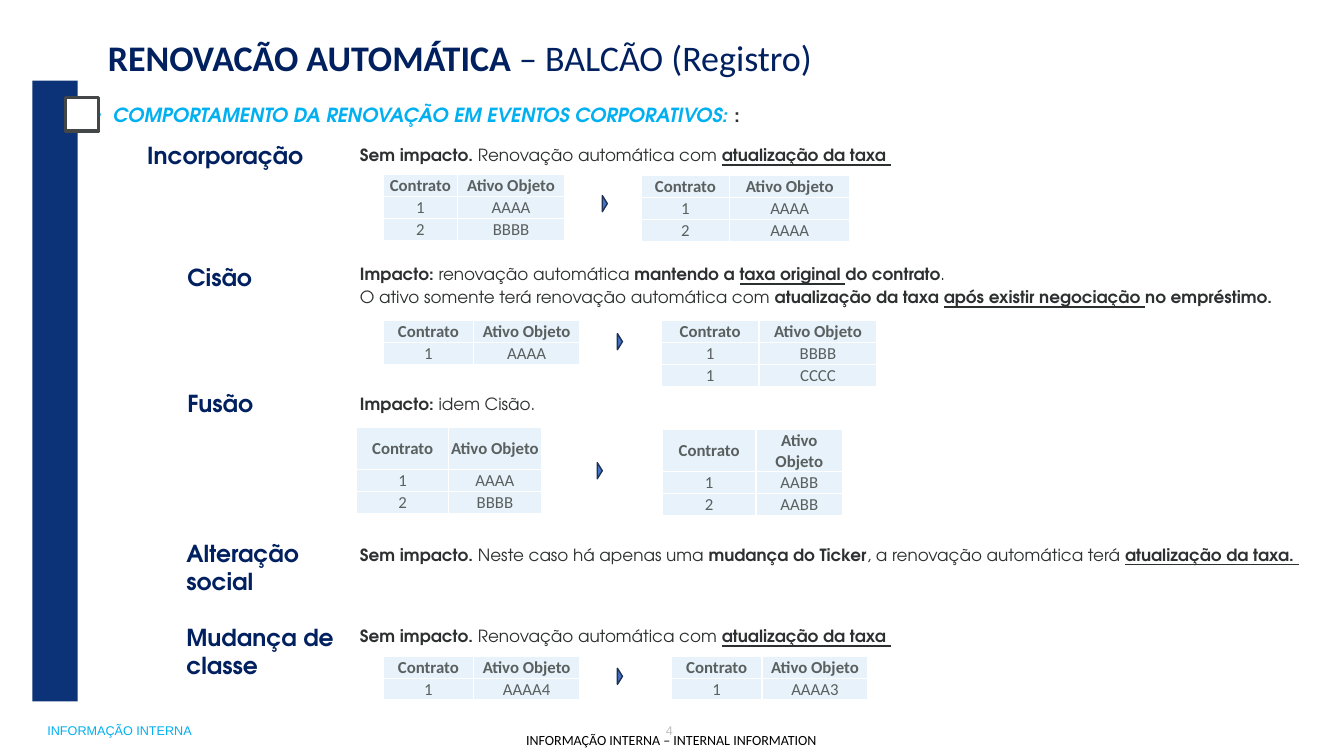
"""Build the slide on automatic renewal under corporate events."""
import dataclasses
import typing

import lxml.etree
import pptx
import pptx.dml.color
import pptx.enum.shapes
import pptx.enum.text
import pptx.oxml.ns
import pptx.util

COLORS = {
    "navy": "002060", "sidebar": "0C3377", "cyan": "00B0F0", "ink": "2D3030",
    "cell": "E7F2FA", "cell_text": "5A5F5F", "white": "FFFFFF", "frame": "444747",
    "arrow": "4472C4", "arrow_line": "1E3256", "number": "BFBFBF", "black": "000000",
}
COLUMNS, ROWS = 133.33, 75
DISPLAY_FONT = "TeX Gyre Adventor"
ALIGN = pptx.enum.text.PP_ALIGN
ANCHOR = pptx.enum.text.MSO_ANCHOR
SHAPES = pptx.enum.shapes.MSO_SHAPE
TEXT_LEFT, TEXT_WIDTH = 35.2, 96.5
ROW_HEIGHT = 2.18

deck = pptx.Presentation()
deck.slide_width = pptx.util.Inches(13.33)
deck.slide_height = pptx.util.Inches(7.5)


class Area(typing.NamedTuple):
    left: float
    top: float
    width: float
    height: float


class Span(typing.NamedTuple):
    text: str
    bold: bool = False
    underline: bool = False
    italic: bool = False
    color: str = ""


@dataclasses.dataclass
class Grid:
    left: float
    top: float
    widths: tuple[float, float]
    assets: list[tuple[str, str]]
    header: float = ROW_HEIGHT


@dataclasses.dataclass
class Event:
    name: str
    label: Area
    text_top: float
    lines: list[list[Span]]
    grids: list[Grid] = dataclasses.field(default_factory=list)
    arrow: tuple[float, float] | None = None


@dataclasses.dataclass
class Style:
    size: float
    color: str
    font: str = DISPLAY_FONT
    align: typing.Any = ALIGN.LEFT
    anchor: typing.Any = ANCHOR.TOP
    inset: tuple[float, float] = (1, 0.5)
    spacing: float = 1.0


def column(count: float) -> int:
    return round(deck.slide_width * count / COLUMNS)


def row(count: float) -> int:
    return round(deck.slide_height * count / ROWS)


def rgb(name: str) -> pptx.dml.color.RGBColor:
    return pptx.dml.color.RGBColor.from_string(COLORS[name])


def apply(target: typing.Any, values: dict[str, typing.Any]) -> None:
    for name, value in values.items():
        setattr(target, name, value)


def frame(area: Area) -> tuple[int, int, int, int]:
    return column(area.left), row(area.top), column(area.width), row(area.height)


def write(box: typing.Any, lines: list[list[Span]], style: Style) -> None:
    across, down = column(style.inset[0]), row(style.inset[1])
    text = box.text_frame
    apply(text, {
        "word_wrap": True, "auto_size": pptx.enum.text.MSO_AUTO_SIZE.NONE,
        "vertical_anchor": style.anchor, "margin_left": across, "margin_right": across,
        "margin_top": down, "margin_bottom": down,
    })
    for index, line in enumerate(lines):
        para = text.add_paragraph() if index else text.paragraphs[0]
        apply(para, {
            "alignment": style.align, "line_spacing": style.spacing,
            "space_before": pptx.util.Pt(2.1 if index else 0),
        })
        for span in line:
            run = para.add_run()
            run.text = span.text
            apply(run.font, {
                "size": pptx.util.Pt(style.size), "name": style.font, "bold": span.bold,
                "italic": span.italic, "underline": span.underline,
            })
            run.font.color.rgb = rgb(span.color or style.color)


def add_text(page: typing.Any, area: Area, lines: list[list[Span]], style: Style) -> None:
    write(page.shapes.add_textbox(*frame(area)), lines, style)


def fill_placeholder(box: typing.Any, area: Area, line: list[Span], style: Style) -> None:
    apply(box, dict(zip(("left", "top", "width", "height"), frame(area))))
    write(box, [line], style)


def add_block(page: typing.Any, kind: typing.Any, area: Area, fill: str,
              line: str = "", weight: float = 1, rotation: float = 0) -> None:
    block = page.shapes.add_shape(kind, *frame(area))
    block.shadow.inherit = False
    block.rotation = rotation
    block.fill.solid()
    block.fill.fore_color.rgb = rgb(fill)
    if line:
        block.line.color.rgb = rgb(line)
        block.line.width = pptx.util.Pt(weight)
    else:
        block.line.fill.background()


def add_borders(cell: typing.Any) -> None:
    qn = pptx.oxml.ns.qn
    properties = cell._tc.get_or_add_tcPr()
    for index, side in enumerate(("a:lnL", "a:lnR", "a:lnT", "a:lnB")):
        border = lxml.etree.Element(qn(side), w=str(pptx.util.Pt(1)))
        solid = lxml.etree.SubElement(border, qn("a:solidFill"))
        lxml.etree.SubElement(solid, qn("a:srgbClr"), val=COLORS["white"])
        properties.insert(index, border)


def add_grid(page: typing.Any, grid: Grid) -> None:
    records = [("Contrato", "Ativo Objeto"), *grid.assets]
    heights = [grid.header] + [ROW_HEIGHT] * len(grid.assets)
    area = Area(grid.left, grid.top, sum(grid.widths), sum(heights))
    table = page.shapes.add_table(len(records), 2, *frame(area)).table
    apply(table, {"first_row": False, "horz_banding": False})
    for index, width in enumerate(grid.widths):
        table.columns[index].width = column(width)
    style = Style(12, "cell_text", "Calibri", ALIGN.CENTER)
    for y, record in enumerate(records):
        table.rows[y].height = row(heights[y])
        for x, value in enumerate(record):
            cell = table.cell(y, x)
            apply(cell, {
                "vertical_anchor": ANCHOR.MIDDLE, "margin_left": column(0.1),
                "margin_right": column(0.1), "margin_top": row(0.1), "margin_bottom": 0,
            })
            para = cell.text_frame.paragraphs[0]
            para.alignment = style.align
            run = para.add_run()
            run.text = value
            apply(run.font, {"size": pptx.util.Pt(style.size), "name": style.font, "bold": y == 0})
            run.font.color.rgb = rgb(style.color)
            cell.fill.solid()
            cell.fill.fore_color.rgb = rgb("cell")
            add_borders(cell)


def add_event(page: typing.Any, event: Event) -> None:
    add_text(page, event.label, [[Span(event.name, True)]], Style(16.7, "navy"))
    area = Area(TEXT_LEFT, event.text_top, TEXT_WIDTH, 2.4 * len(event.lines))
    add_text(page, area, event.lines, Style(12, "ink", inset=(0.5, 0.2)))
    for grid in event.grids:
        add_grid(page, grid)
    if event.arrow:
        x, y = event.arrow
        add_block(page, SHAPES.ISOSCELES_TRIANGLE, Area(x - 0.8, y - 0.25, 1.6, 0.5),
                  "arrow", "arrow_line", rotation=90)


RATE_UPDATE = [Span("Sem impacto. ", True), Span("Renovação automática com "),
               Span("atualização da taxa ", True, True)]
EVENTS = [
    Event("Incorporação", Area(13.6, 13.5, 19.1, 3.8), 14.2, [RATE_UPDATE],
          [Grid(38, 17.3, (7.4, 10.6), [("1", "AAAA"), ("2", "BBBB")]),
           Grid(63.6, 17.4, (8.8, 11.9), [("1", "AAAA"), ("2", "AAAA")])], (60, 20.2)),
    Event("Cisão", Area(17.6, 25.6, 11.1, 3.8), 26,
          [[Span("Impacto: ", True), Span("renovação automática "), Span("mantendo a ", True),
            Span("taxa original ", True, True), Span("do contrato", True), Span(".")],
           [Span("O ativo somente terá renovação automática com "),
            Span("atualização da taxa ", True), Span("após existir negociação ", True, True),
            Span("no empréstimo.", True)]],
          [Grid(38, 31.8, (9, 10.5), [("1", "AAAA")]),
           Grid(65.6, 31.8, (9.7, 11.7), [("1", "BBBB"), ("1", "CCCC")])], (61.5, 33.9)),
    Event("Fusão", Area(17.6, 38.1, 11.1, 3.8), 38.9,
          [[Span("Impacto: ", True), Span("idem Cisão.")]],
          [Grid(35.4, 42.4, (9.1, 9.2), [("1", "AAAA"), ("2", "BBBB")], 4.2),
           Grid(65.7, 42.6, (9.3, 8.6), [("1", "AABB"), ("2", "AABB")], 4.2)], (59.5, 46.7)),
    Event("Alteração social", Area(17.5, 53, 18.3, 6.6), 53.8,
          [[Span("Sem impacto. ", True), Span("Neste caso há apenas uma "),
            Span("mudança do Ticker", True), Span(", a renovação automática terá "),
            Span("atualização da taxa. ", True, True)]]),
    Event("Mudança de classe", Area(17.5, 61.3, 18.3, 6.6), 61.9, [RATE_UPDATE],
          [Grid(38, 65.1, (9, 10.5), [("1", "AAAA4")]),
           Grid(66.6, 65.1, (9, 10.5), [("1", "AAAA3")])], (61.5, 67.1)),
]


def main() -> None:
    page = deck.slides.add_slide(deck.slide_layouts[1])
    fill_placeholder(page.shapes.title, Area(9.7, 3.4, 86.6, 5.1),
                     [Span("RENOVACÃO AUTOMÁTICA ", True), Span("– BALCÃO (Registro)")],
                     Style(25.7, "navy", "Calibri", anchor=ANCHOR.MIDDLE, spacing=0.9))
    body = page.placeholders[1]
    fill_placeholder(body, Area(8.9, 10, 85.6, 5.6),
                     [Span("COMPORTAMENTO DA RENOVAÇÃO EM EVENTOS CORPORATIVOS: ", True, italic=True),
                      Span(":", True, color="ink")],
                     Style(13.9, "cyan", align=ALIGN.JUSTIFY, inset=(0.5, 0.2)))
    bullet = body.text_frame.paragraphs[0]._p.get_or_add_pPr()
    bullet.set("marL", str(column(1.8)))
    bullet.set("indent", str(-column(1.8)))
    add_block(page, SHAPES.RECTANGLE, Area(3.2, 8, 4.5, 61.6), "sidebar")
    add_block(page, SHAPES.RECTANGLE, Area(6.5, 9.7, 3.3, 3.3), "white", "frame", 2.25)
    for event in EVENTS:
        add_event(page, event)
    add_text(page, Area(3.7, 71.2, 37.8, 2.5), [[Span("INFORMAÇÃO INTERNA")]], Style(9, "cyan", "Arial"))
    add_text(page, Area(47.5, 71.2, 37.8, 2.5), [[Span("4")]], Style(9, "number", "Arial", ALIGN.CENTER))
    add_text(page, Area(52.2, 72.6, 29.3, 1.7), [[Span("INFORMAÇÃO INTERNA – INTERNAL INFORMATION")]],
             Style(10, "black", "Calibri", inset=(0, 0)))
    deck.save("out.pptx")


if __name__ == "__main__":
    main()
